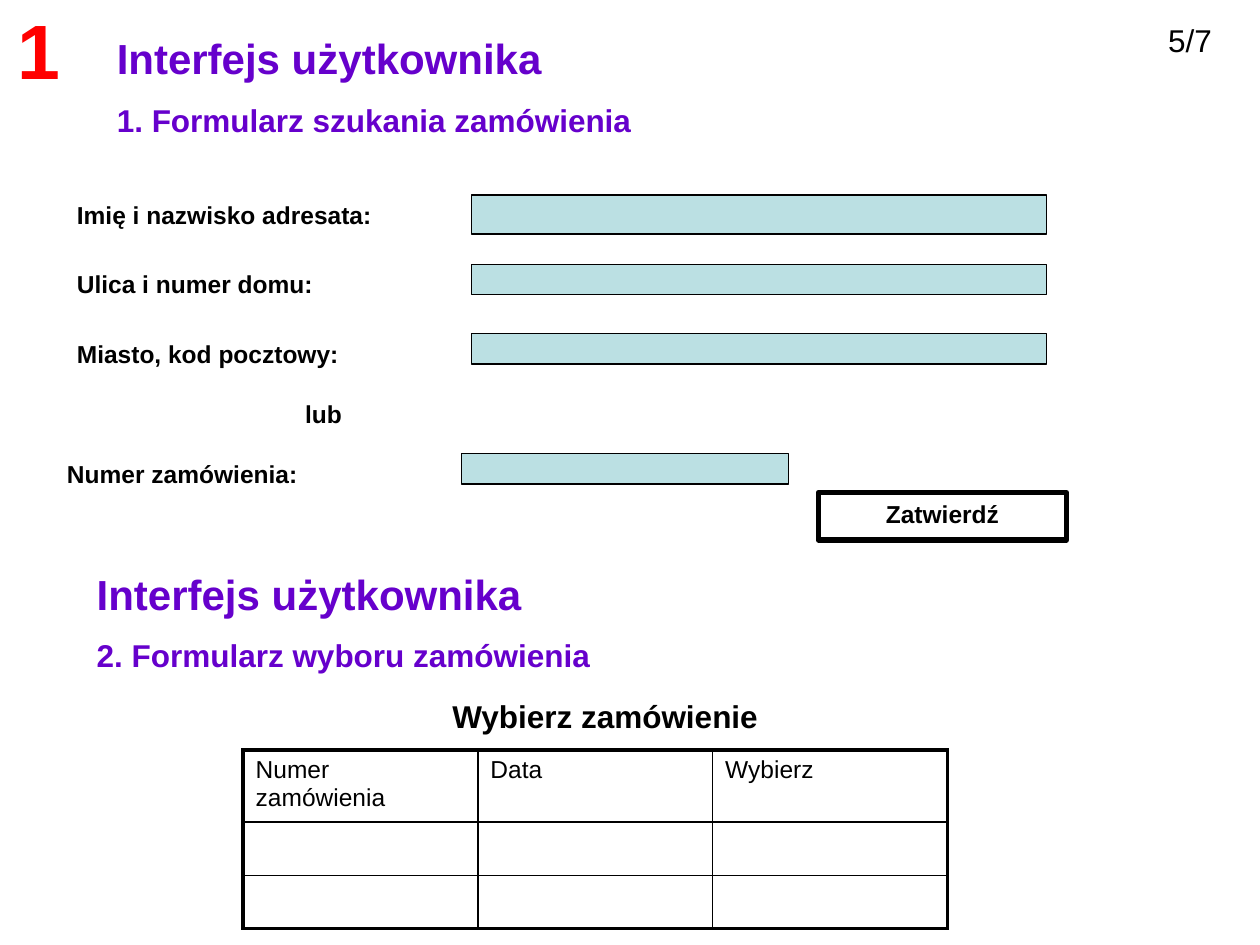
import pptx
import pptx.util
import pptx.dml.color
import pptx.enum.shapes
import pptx.enum.text
from lxml import etree
from pptx.oxml.ns import qn

Cm, Pt = pptx.util.Cm, pptx.util.Pt
ALIGN = pptx.enum.text.PP_ALIGN
COLORS = {"heading": "6600CC", "text": "000000", "number": "FF0000",
          "field": "BBE0E3", "line": "000000"}


def rgb(name):
    return pptx.dml.color.RGBColor.from_string(COLORS[name])


def add_run(p, text, size, bold=True, color="text"):
    r = p.add_run()
    r.text = text
    r.font.name = "Arial"
    r.font.size = Pt(size)
    r.font.bold = bold
    r.font.color.rgb = rgb(color)


def place(sp, left, top, width, height):
    sp.left, sp.top, sp.width, sp.height = map(Cm, (left, top, width, height))


def set_frame(tf):
    tf.word_wrap = True
    tf.auto_size = pptx.enum.text.MSO_AUTO_SIZE.NONE
    tf.vertical_anchor = pptx.enum.text.MSO_ANCHOR.TOP


def add_text(s, box, text, size=14, bold=True, color="text", align=ALIGN.LEFT):
    tf = s.shapes.add_textbox(*map(Cm, box)).text_frame
    set_frame(tf)
    p = tf.paragraphs[0]
    p.alignment = align
    add_run(p, text, size, bold, color)


def fill_heading(sp, left, top, subtitle):
    """Section name with the form's name below it."""
    place(sp, left, top, 18.8, 2.41)
    tf = sp.text_frame
    set_frame(tf)
    first, second = tf.paragraphs[0], tf.add_paragraph()
    add_run(first, "Interfejs użytkownika", 24, color="heading")
    add_run(second, subtitle, 18, color="heading")
    first.alignment = second.alignment = ALIGN.LEFT
    first.space_before = Pt(2)
    second.space_before = Pt(10)


def add_box(s, box, line_width, fill=None):
    sp = s.shapes.add_shape(pptx.enum.shapes.MSO_SHAPE.RECTANGLE, *map(Cm, box))
    sp.shadow.inherit = False
    if fill:
        sp.fill.solid()
        sp.fill.fore_color.rgb = rgb(fill)
    else:
        sp.fill.background()
    sp.line.color.rgb = rgb("line")
    sp.line.width = Pt(line_width)
    return sp


def add_field(s, label, label_box, field_box):
    add_text(s, label_box, label)
    add_box(s, field_box, 0.75, "field")


def add_button(s, box, text):
    tf = add_box(s, box, 3).text_frame
    set_frame(tf)
    p = tf.paragraphs[0]
    p.alignment = ALIGN.CENTER
    add_run(p, text, 14)


def set_borders(cell, widths):
    tc_pr = cell._tc.get_or_add_tcPr()
    for i, (side, width) in enumerate(widths.items()):
        ln = etree.Element(qn(f"a:ln{side}"), w=str(Pt(width)))
        fill = etree.SubElement(ln, qn("a:solidFill"))
        etree.SubElement(fill, qn("a:srgbClr"), val=COLORS["line"])
        tc_pr.insert(i, ln)


def add_order_table(s, box, headers, row_heights):
    rows, cols = len(row_heights), len(headers)
    table = s.shapes.add_table(rows, cols, *map(Cm, box)).table
    table.first_row = table.horz_banding = False
    for row, height in zip(table.rows, row_heights):
        row.height = Cm(height)
    for i in range(rows):
        for j in range(cols):
            cell = table.cell(i, j)
            cell.fill.background()
            outer = {"L": j == 0, "R": j == cols - 1,
                     "T": i == 0, "B": i == rows - 1}
            set_borders(cell, {k: 2.25 if v else 1 for k, v in outer.items()})
    for j, text in enumerate(headers):
        p = table.cell(0, j).text_frame.paragraphs[0]
        p.space_before = Pt(3)
        add_run(p, text, 14, bold=False)


def main():
    prs = pptx.Presentation()
    prs.slide_width, prs.slide_height = Cm(25.4), Cm(19.05)
    s = prs.slides.add_slide(prs.slide_layouts[5])

    fill_heading(s.shapes.title, 2.1, 0.53, "1. Formularz szukania zamówienia")
    add_text(s, (0.1, -0.08, 1.4, 2.13), "1", 44, color="number")
    add_text(s, (23.3, 0.3, 1.8, 1.02), "5/7", 18, bold=False)

    fields = [("Imię i nazwisko adresata:", 0.79),
              ("Ulica i numer domu:", 0.61),
              ("Miasto, kod pocztowy:", 0.61)]
    for i, (label, height) in enumerate(fields):
        top = 3.9 + 1.4 * i
        add_field(s, label, (1.3, top, 7.2, 0.84), (9.5, top + 0.03, 11.6, height))
    add_text(s, (5.9, 7.92, 3.4, 0.84), "lub")
    add_field(s, "Numer zamówienia:", (1.1, 9.12, 7.2, 0.84), (9.3, 9.15, 6.6, 0.61))
    add_button(s, (16.5, 9.93, 5, 0.96), "Zatwierdź")

    second_heading = s.shapes.add_textbox(0, 0, 0, 0)
    fill_heading(second_heading, 1.7, 11.33, "2. Formularz wyboru zamówienia")
    add_text(s, (5.9, 13.92, 12.6, 1.02), "Wybierz zamówienie", 18,
             align=ALIGN.CENTER)
    add_order_table(s, (4.9, 15.12, 14.2, 3.6),
                    ["Numer zamówienia", "Data", "Wybierz"], [1.45, 1.08, 1.07])
    prs.save("out.pptx")


if __name__ == "__main__":
    main()
